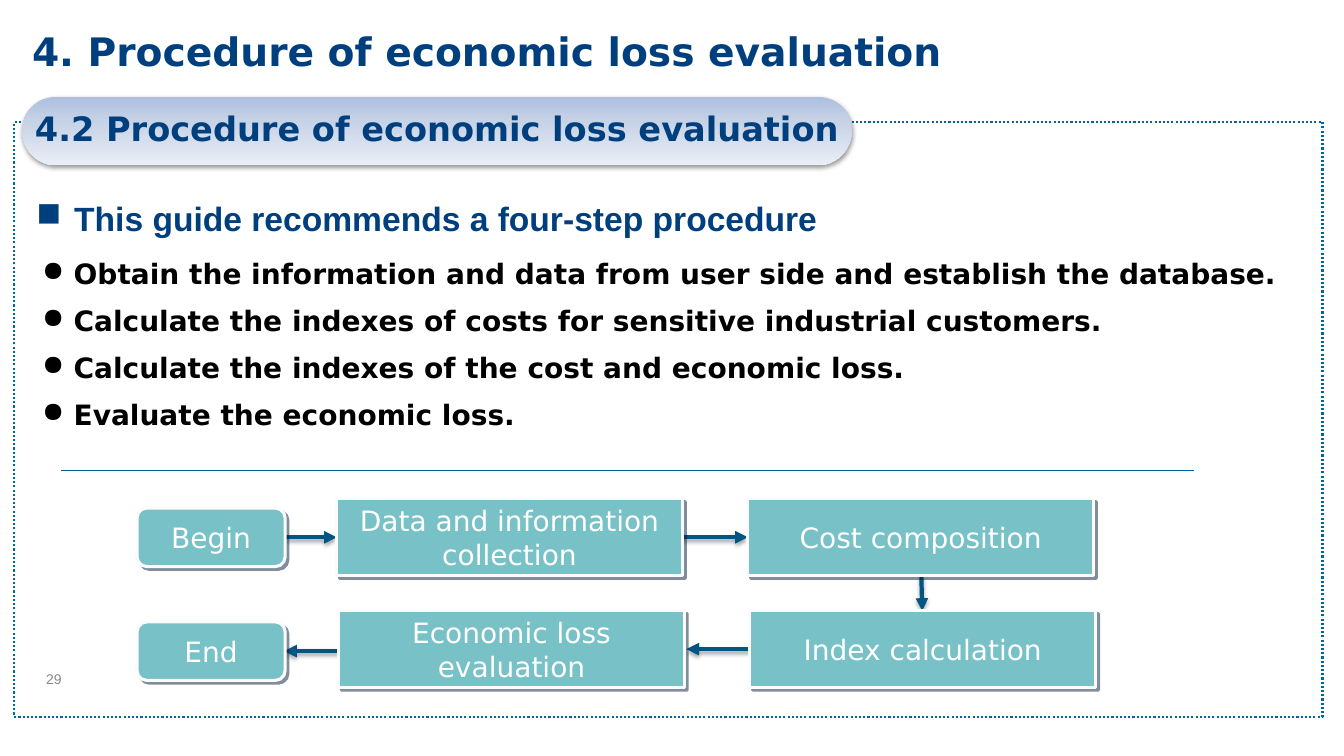
from pptx import Presentation
from pptx.dml.color import RGBColor
from pptx.enum.dml import MSO_LINE
from pptx.enum.shapes import MSO_CONNECTOR, MSO_SHAPE as SHAPE
from pptx.enum.text import MSO_ANCHOR as ANCHOR, PP_ALIGN as ALIGN
from pptx.oxml import parse_xml
from pptx.oxml.ns import nsdecls, qn
from pptx.oxml.xmlchemy import OxmlElement
from pptx.util import Pt

NAVY = RGBColor(0x00, 0x3F, 0x7E)
TEAL = RGBColor(0x77, 0xC1, 0xC7)
OFF_WHITE = RGBColor(0xFC, 0xFC, 0xFC)
WHITE = RGBColor(0xFF, 0xFF, 0xFF)
BLACK = RGBColor(0x00, 0x00, 0x00)
GREY = RGBColor(0x89, 0x89, 0x89)
SHADE = RGBColor(0x00, 0x1D, 0x3A)
ARROW = RGBColor(0x00, 0x55, 0x82)
FRAME = RGBColor(0x00, 0x67, 0x99)
RULE = RGBColor(0x00, 0x60, 0x96)
BANNER_STOPS = [
    (0, RGBColor(0xAC, 0xBF, 0xDE)),
    (35, RGBColor(0xC6, 0xD2, 0xE6)),
    (100, RGBColor(0xE9, 0xEE, 0xF6)),
]
SANS, ARIAL = "DejaVu Sans", "Arial"


def cast_shadow(item, colour, alpha, blur, distance, angle):
    properties = item._element.spPr
    for old in properties.findall(qn("a:effectLst")):
        properties.remove(old)
    properties.append(parse_xml(
        f'<a:effectLst {nsdecls("a")}><a:outerShdw blurRad="{Pt(blur)}" '
        f'dist="{Pt(distance)}" dir="{angle * 60000}" algn="ctr" rotWithShape="0">'
        f'<a:srgbClr val="{colour}"><a:alpha val="{alpha * 1000}"/></a:srgbClr>'
        f'</a:outerShdw></a:effectLst>'))


def write(frame, lines, size, colour, font=SANS, bold=False, align=ALIGN.LEFT,
          spacing=None, bullet=None, hang=0):
    for number, line in enumerate(lines):
        paragraph = frame.paragraphs[0] if number == 0 else frame.add_paragraph()
        if bullet:
            settings = paragraph._p.get_or_add_pPr()
            settings.set("marL", str(Pt(hang)))
            settings.set("indent", str(-Pt(hang)))
            mark = OxmlElement("a:buChar")
            mark.set("char", bullet)
            settings.append(mark)
        paragraph.alignment = align
        if spacing:
            paragraph.line_spacing = spacing
        run = paragraph.add_run()
        run.text = line
        run.font.name = font
        run.font.size = Pt(size)
        run.font.bold = bold
        run.font.color.rgb = colour


deck = Presentation()
deck.slide_width, deck.slide_height = Pt(960), Pt(540)
slide = deck.slides.add_slide(deck.slide_layouts[6])
shapes = slide.shapes

arrows = [
    (658.1, 411.1, 658.8, 436.3),
    (243.4, 465.1, 203, 465.1),
    (541.4, 463.7, 490.3, 463.7),
    (486.7, 383.8, 534.2, 383.8),
    (203, 383.8, 240.5, 383.8),
]
for ends in arrows:
    arrow = shapes.add_connector(MSO_CONNECTOR.STRAIGHT, *map(Pt, ends))
    arrow.line.color.rgb = ARROW
    arrow.line.width = Pt(3)
    head = OxmlElement("a:tailEnd")
    head.set("type", "triangle")
    arrow.line._get_or_add_ln().append(head)
    cast_shadow(arrow, BLACK, 35, 3.1, 1.8, 90)

page = shapes.add_textbox(Pt(25.9), Pt(470.2), Pt(72), Pt(28.8)).text_frame
page.word_wrap = True
page.vertical_anchor = ANCHOR.MIDDLE
write(page, ["29"], 10, GREY, ARIAL)

title = shapes.add_textbox(Pt(15.8), Pt(15.8), Pt(685.4), Pt(46.8)).text_frame
title.word_wrap = True
write(title, ["4. Procedure of economic loss evaluation"], 28, NAVY, bold=True)

STEP, TERMINAL = (SHAPE.RECTANGLE, 247, 54.7), (SHAPE.ROUNDED_RECTANGLE, 105.8, 41.8)
flow = [
    (STEP, 240.5, 356.4, ["Data and information", "collection"]),
    (TERMINAL, 97.9, 362.9, ["Begin"]),
    (STEP, 534.2, 356.4, ["Cost composition"]),
    (STEP, 241.9, 436.3, ["Economic loss", "evaluation"]),
    (STEP, 535.7, 436.3, ["Index calculation"]),
    (TERMINAL, 97.9, 444.2, ["End"]),
]
for (outline, width, height), left, top, lines in flow:
    box = shapes.add_shape(outline, Pt(left), Pt(top), Pt(width), Pt(height))
    box.fill.solid()
    box.fill.fore_color.rgb = TEAL
    box.line.color.rgb = OFF_WHITE
    box.line.width = Pt(2.25)
    cast_shadow(box, SHADE, 50, 0, 2.8, 45)
    box.text_frame.word_wrap = False
    box.text_frame.vertical_anchor = ANCHOR.MIDDLE
    write(box.text_frame, lines, 20, WHITE, align=ALIGN.CENTER)

border = shapes.add_shape(SHAPE.RECTANGLE, Pt(10.1), Pt(87.1), Pt(934.6), Pt(424.8))
border.shadow.inherit = False
border.fill.background()
border.line.color.rgb = FRAME
border.line.width = Pt(1.5)
border.line.dash_style = MSO_LINE.ROUND_DOT

banner = shapes.add_shape(SHAPE.ROUNDED_RECTANGLE, Pt(15.8), Pt(69.1), Pt(592.6), Pt(49))
banner.adjustments[0] = 0.5
banner.rotation = 180
banner.fill.background()
banner.line.fill.background()
stops = "".join(f'<a:gs pos="{place * 1000}"><a:srgbClr val="{colour}"/></a:gs>'
                for place, colour in BANNER_STOPS)
banner_properties = banner._element.spPr
banner_properties.replace(banner_properties.find(qn("a:noFill")), parse_xml(
    f'<a:gradFill {nsdecls("a")} rotWithShape="1"><a:gsLst>{stops}</a:gsLst>'
    f'<a:lin ang="{270 * 60000}" scaled="0"/></a:gradFill>'))
cast_shadow(banner, BLACK, 38, 3.1, 1.6, 90)

heading = shapes.add_textbox(Pt(-2.2), Pt(65.5), Pt(628.6), Pt(56.2)).text_frame
heading.word_wrap = True
heading.vertical_anchor = ANCHOR.MIDDLE
heading.margin_left = heading.margin_right = Pt(8.64)
heading.margin_top = heading.margin_bottom = Pt(8.64)
write(heading, ["4.2 Procedure of economic loss evaluation"], 24, NAVY, bold=True,
      align=ALIGN.CENTER, spacing=0.9)

divider = shapes.add_connector(MSO_CONNECTOR.STRAIGHT, Pt(43.9), Pt(336.2), Pt(853.2), Pt(336.2))
divider.line.color.rgb = RULE
divider.line.width = Pt(0.75)
divider._element.spPr.append(OxmlElement("a:effectLst"))

lead = shapes.add_textbox(Pt(-16.6), Pt(141.1), Pt(643), Pt(33.1)).text_frame
lead.word_wrap = True
write(lead, ["This guide recommends a four-step procedure"], 24, NAVY, ARIAL, True,
      ALIGN.CENTER, 0.9, "■", 27)

steps = shapes.add_textbox(Pt(23), Pt(169.9), Pt(934.6), Pt(139)).text_frame
steps.word_wrap = True
write(steps, [
    "Obtain the information and data from user side and establish the database.",
    "Calculate the indexes of costs for sensitive industrial customers.",
    "Calculate the indexes of the cost and economic loss.",
    "Evaluate the economic loss.",
], 20, BLACK, bold=True, spacing=1.4, bullet="●", hang=22.5)

deck.save("out.pptx")
